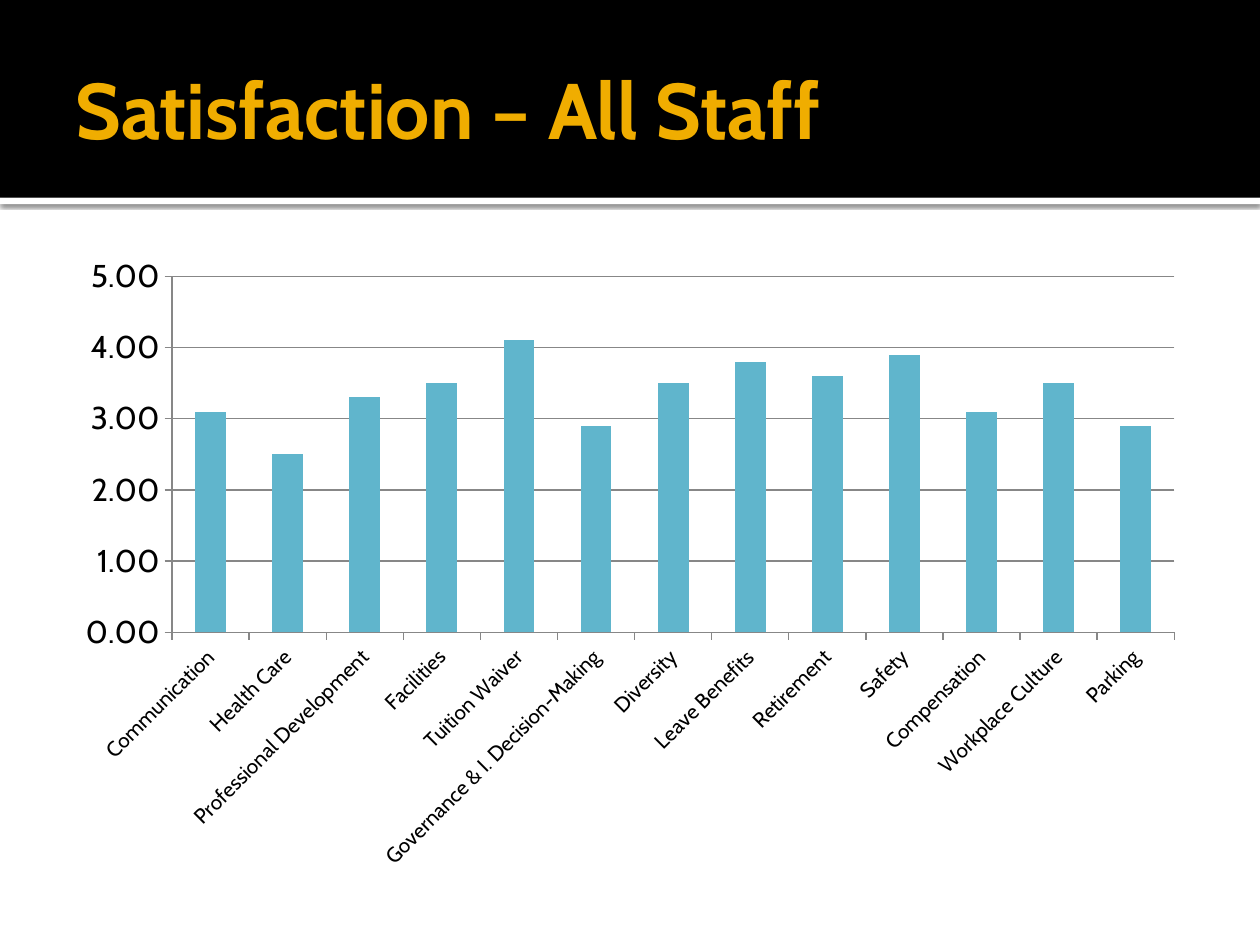
from dataclasses import dataclass

from lxml import etree
from pptx import Presentation
from pptx.chart.data import CategoryChartData
from pptx.dml.color import RGBColor
from pptx.enum.chart import XL_CHART_TYPE, XL_TICK_MARK
from pptx.enum.shapes import MSO_SHAPE
from pptx.enum.text import MSO_ANCHOR
from pptx.oxml.ns import qn
from pptx.util import Inches, Pt

RECT = MSO_SHAPE.RECTANGLE
MIDDLE = MSO_ANCHOR.MIDDLE
COLUMN = XL_CHART_TYPE.COLUMN_CLUSTERED
OUT = XL_TICK_MARK.OUTSIDE
FACE = "Cabin"
BLACK, WHITE, GOLD, BLUE, GRAY = "000000", "FFFFFF", "F0AD00", "60B5CC", "878787"


@dataclass
class Band:
    top: float
    height: float
    color: str
    shade: bool = False


BANDS = [Band(1.57, 0.05, WHITE, True), Band(0, 1.57, BLACK)]
SCORES = {
    "Communication": 3.1,
    "Health Care": 2.5,
    "Professional Development": 3.3,
    "Facilities": 3.5,
    "Tuition Waiver": 4.1,
    "Governance & I. Decision-Making": 2.9,
    "Diversity": 3.5,
    "Leave Benefits": 3.8,
    "Retirement": 3.6,
    "Safety": 3.9,
    "Compensation": 3.1,
    "Workplace Culture": 3.5,
    "Parking": 2.9,
}


def paint(color: str) -> RGBColor:
    return RGBColor.from_string(color)


def style(font, size: float, color: str, bold: bool = False) -> None:
    font.name, font.size, font.bold = FACE, Pt(size), bold
    font.color.rgb = paint(color)


def cast(shape) -> None:
    """Give the shape a soft shadow that falls straight down."""
    shape.shadow.inherit = False
    effects = shape._element.spPr.find(qn("a:effectLst"))
    outer = etree.SubElement(
        effects, qn("a:outerShdw"), blurRad=str(Pt(2.5)), dist=str(Pt(0.8)),
        dir="5400000", algn="tl", rotWithShape="0")
    tint = etree.SubElement(outer, qn("a:srgbClr"), val=BLACK)
    etree.SubElement(tint, qn("a:alpha"), val="60000")


def add_band(slide, band: Band) -> None:
    shape = slide.shapes.add_shape(
        RECT, 0, Inches(band.top), Inches(10), Inches(band.height))
    shape.fill.solid()
    shape.fill.fore_color.rgb = paint(band.color)
    shape.line.fill.background()
    if band.shade:
        cast(shape)
    else:
        shape.shadow.inherit = False


def add_text(slide, text: str, *, left: float, top: float, width: float,
             height: float, size: float, color: str, bold: bool = False) -> None:
    box = slide.shapes.add_textbox(
        Inches(left), Inches(top), Inches(width), Inches(height))
    frame = box.text_frame
    frame.word_wrap = True
    frame.vertical_anchor = MIDDLE
    frame.margin_right = Inches(0.05)
    run = frame.paragraphs[0].add_run()
    run.text = text
    style(run.font, size, color, bold)


def set_axis(axis, size: float) -> None:
    axis.major_tick_mark = OUT
    axis.format.line.color.rgb = paint(GRAY)
    axis.format.line.width = Pt(0.75)
    style(axis.tick_labels.font, size, BLACK)


def add_graph(slide) -> None:
    data = CategoryChartData(number_format="0.00")
    data.categories = list(SCORES)
    data.add_series("Series 1", list(SCORES.values()))
    chart = slide.shapes.add_chart(
        COLUMN, Inches(0.5), Inches(1.94), Inches(9), Inches(5.06), data).chart
    chart.has_legend = chart.has_title = False
    style(chart.font, 18, BLACK)
    plot = chart.plots[0]
    plot.gap_width = 150
    plot.vary_by_categories = False
    fill = plot.series[0].format.fill
    fill.solid()
    fill.fore_color.rgb = paint(BLUE)
    names, scale = chart.category_axis, chart.value_axis
    set_axis(names, 12)
    set_axis(scale, 18)
    names._element.txPr.find(qn("a:bodyPr")).set("rot", "-2700000")
    scale.minimum_scale, scale.maximum_scale, scale.major_unit = 0, 5, 1
    scale.tick_labels.number_format = "0.00"
    scale.tick_labels.number_format_is_linked = False
    scale.has_major_gridlines = True
    grid = scale.major_gridlines.format.line
    grid.color.rgb = paint(GRAY)
    grid.width = Pt(0.75)


def main() -> None:
    deck = Presentation()
    deck.slide_width, deck.slide_height = Inches(10), Inches(7.5)
    slide = deck.slides.add_slide(deck.slide_layouts[6])
    for band in BANDS:
        add_band(slide, band)
    add_text(slide, "Satisfaction – All Staff", left=0.5, top=0.17, width=9,
             height=1.37, size=45, color=GOLD, bold=True)
    add_graph(slide)
    deck.save("out.pptx")


if __name__ == "__main__":
    main()
